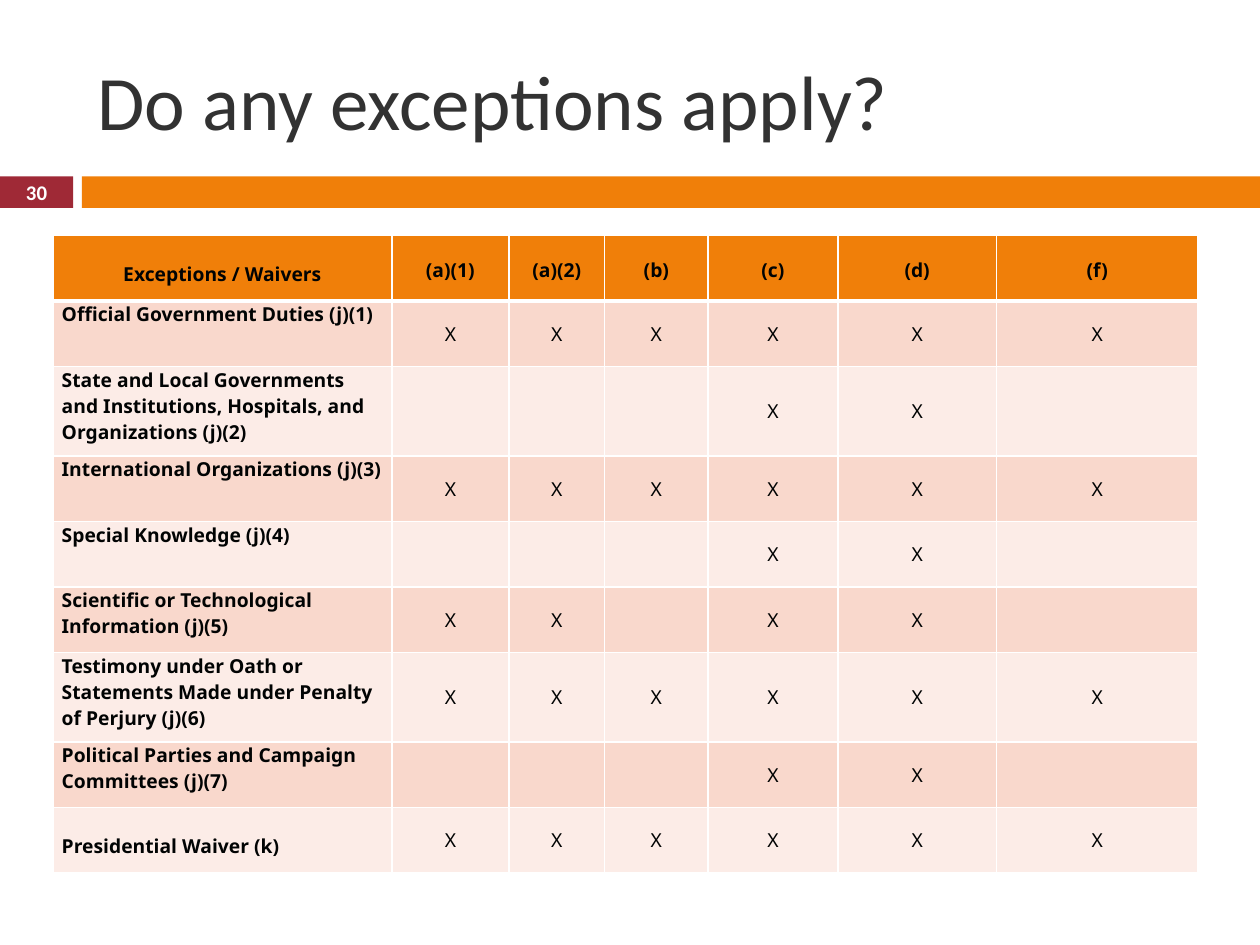
import pptx
import pptx.util
import pptx.dml.color
import pptx.enum.shapes
import pptx.enum.text
import pptx.oxml

Inch = pptx.util.Inches
Pt = pptx.util.Pt
Align = pptx.enum.text.PP_ALIGN
Mid = pptx.enum.text.MSO_ANCHOR.MIDDLE
NS = "http://schemas.openxmlformats.org/drawingml/2006/main"


def paint(item, tint):
    """Give a fill or a font a solid colour from a hex string."""
    if hasattr(item, "solid"):
        item.solid()
        item = item.fore_color
    else:
        item = item.color
    item.rgb = pptx.dml.color.RGBColor.from_string(tint)


def style(frame, face, size, tint, bold, align):
    para = frame.paragraphs[0]
    para.alignment = align
    for run in para.runs:
        run.font.name = face
        run.font.size = Pt(size)
        run.font.bold = bold
        paint(run.font, tint)


deck = pptx.Presentation()
deck.slide_width, deck.slide_height = Inch(10), Inch(7.5)
slide = deck.slides.add_slide(deck.slide_layouts[5])

# Title
title = slide.shapes.title
title.left, title.top = Inch(0.67), Inch(0.25)
title.width, title.height = Inch(8.92), Inch(1.08)
title.text_frame.text = "Do any exceptions apply?"
title.text_frame.vertical_anchor = Mid
style(title.text_frame, "Calibri", 44, "323232", False, Align.LEFT)

# Band under the title, with the page number in its left part
for left, width, tint in [(0, 0.58, "9F2936"), (0.65, 9.35, "F07F09")]:
    bar = slide.shapes.add_shape(
        pptx.enum.shapes.MSO_SHAPE.RECTANGLE,
        Inch(left), Inch(1.4), Inch(width), Inch(0.25))
    bar.shadow.inherit = False
    bar.line.fill.background()
    paint(bar.fill, tint)

page = slide.shapes.add_textbox(0, Inch(1.39), Inch(0.58), Inch(0.27))
page.text_frame.word_wrap = True
page.text_frame.vertical_anchor = Mid
page.text_frame.margin_top = page.text_frame.margin_bottom = 0
page.text_frame.text = "30"
style(page.text_frame, "Calibri", 11.9, "FFFFFF", True, Align.CENTER)

# Table: each exception with the columns it applies to
heads = ["Exceptions / Waivers", "(a)(1)", "(a)(2)", "(b)", "(c)", "(d)", "(f)"]
every = heads[1:]
some = ["(c)", "(d)"]
rules = [
    ("Official Government Duties (j)(1)", every),
    ("State and Local Governments and Institutions, Hospitals, "
     "and Organizations (j)(2)", some),
    ("International Organizations (j)(3)", every),
    ("Special Knowledge (j)(4)", some),
    ("Scientific or Technological Information (j)(5)",
     ["(a)(1)", "(a)(2)", "(c)", "(d)"]),
    ("Testimony under Oath or Statements Made under Penalty "
     "of Perjury (j)(6)", every),
    ("Political Parties and Campaign Committees (j)(7)", some),
    ("Presidential Waiver (k)", every),
]
rows = [heads]
for name, hits in rules:
    rows.append([name] + ["X" if head in hits else "" for head in every])

cols = [2.69, 0.93, 0.76, 0.82, 1.03, 1.26, 1.6]
last = len(rules)
grid = slide.shapes.add_table(
    len(rows), len(cols), Inch(0.42), Inch(1.87), Inch(9.08), Inch(5.07)).table
grid.horz_banding = False
for col, width in zip(grid.columns, cols):
    col.width = Inch(width)

for r, row in enumerate(rows):
    grid.rows[r].height = Inch(0.71 if r in (2, 6) else 0.52)
    tint = "F07F09" if r == 0 else "F9D8CC" if r % 2 else "FCECE7"
    for c, text in enumerate(row):
        cell = grid.cell(r, c)
        paint(cell.fill, tint)
        cell.margin_left = cell.margin_right = Inch(0.07)
        cell.margin_top = cell.margin_bottom = 0
        if r == 0:
            cell.margin_top = Inch(0.17 if c else 0.2)
        elif c:
            cell.vertical_anchor = Mid
        elif r == last:
            cell.margin_top = Inch(0.2)
        if text:
            cell.text_frame.text = text
            style(cell.text_frame, "Noto Sans", 11, "010303", r == 0 or c == 0,
                  Align.CENTER if r == 0 or c else Align.LEFT)

        # White rules, thicker under the header
        props = cell._tc.get_or_add_tcPr()
        for spot, side in enumerate("LRTB"):
            thick = (r, side) in [(0, "B"), (1, "T")]
            props.insert(spot, pptx.oxml.parse_xml(
                f'<a:ln{side} xmlns:a="{NS}" w="{Pt(3 if thick else 1)}">'
                '<a:solidFill><a:srgbClr val="FFFFFF"/></a:solidFill>'
                f'</a:ln{side}>'))

deck.save("out.pptx")
